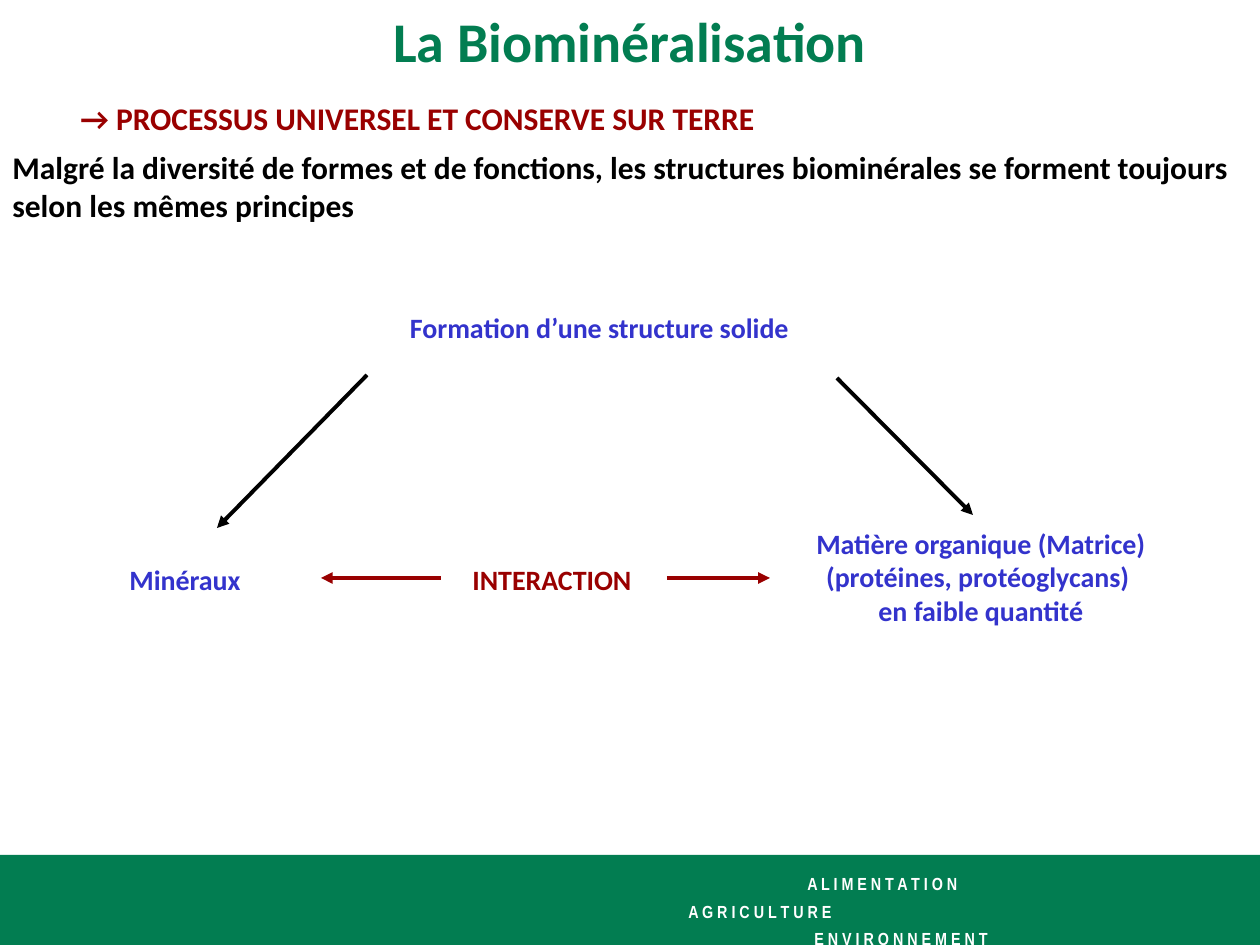
"""Build the slide on biomineralisation and its universal principles."""
import pptx
import pptx.dml.color
import pptx.enum.shapes
import pptx.enum.text
import pptx.oxml.ns
import pptx.util
from lxml import etree

RGBColor = pptx.dml.color.RGBColor
GREEN = RGBColor(0x02, 0x7D, 0x51)
RED = RGBColor(0x99, 0x00, 0x00)
BLUE = RGBColor(0x33, 0x33, 0xCC)
BLACK = RGBColor(0x00, 0x00, 0x00)
WHITE = RGBColor(0xFF, 0xFF, 0xFF)

PX = 914400 // 126
WIDTH, HEIGHT = 1260, 945
BAND = (0, 855, 1291, 96)
MOTTO_BOX = (669, 861, 431, 94)
MOTTO = [
    ("A L I M E N T A T I O N", 126),
    ("A G R I C U L T U R E", 7),
    ("E N V I R O N N E M E N T", 133),
]
TEXTS = [
    ("Malgré la diversité de formes et de fonctions, les structures "
     "biominérales se forment toujours selon les mêmes principes",
     dict(at=(0, 142, WIDTH, 88), size=18, color=BLACK)),
    ("La Biominéralisation",
     dict(at=(0, 0, WIDTH, 79), size=32, color=GREEN, centered=True)),
    ("→ PROCESSUS UNIVERSEL ET CONSERVE SUR TERRE",
     dict(at=(68, 93, 703, 50), size=18, color=RED, wrap=False)),
    ("Formation d’une structure solide",
     dict(at=(285, 304, 629, 47), color=BLUE, centered=True)),
    ("Minéraux", dict(at=(117, 556, 137, 47), color=BLUE, wrap=False)),
    ("Matière organique (Matrice)\n(protéines, protéoglycans) \nen faible quantité",
     dict(at=(702, 520, 558, 113), color=BLUE, centered=True)),
    ("INTERACTION", dict(at=(460, 556, 185, 47), color=RED, wrap=False)),
]
ARROWS = [
    ((367, 375), (217, 528), BLACK),
    ((837, 378), (973, 515), BLACK),
    ((667, 578), (770, 578), RED),
    ((441, 578), (321, 578), RED),
]


def px(*lengths):
    return [length * PX for length in lengths]


def add_text(page, text, at, color, size=16, font="Calibri", centered=False,
             wrap=True, indents=(), spacing=None):
    frame = page.shapes.add_textbox(*px(*at)).text_frame
    frame.word_wrap = wrap
    frame.text = text
    for para in frame.paragraphs:
        if centered:
            para.alignment = pptx.enum.text.PP_ALIGN.CENTER
        if spacing:
            para.line_spacing = spacing
        for span in para.runs:
            span.font.name = font
            span.font.size = pptx.util.Pt(size)
            span.font.bold = True
            span.font.color.rgb = color
    for para, indent in zip(frame.paragraphs, indents):
        para._p.get_or_add_pPr().set("marL", str(indent * PX))


def add_arrow(page, start, end, color):
    arrow = page.shapes.add_connector(
        pptx.enum.shapes.MSO_CONNECTOR.STRAIGHT, *px(*start, *end))
    arrow.line.color.rgb = color
    arrow.line.width = pptx.util.Pt(2.25)
    qn = pptx.oxml.ns.qn
    etree.SubElement(arrow.line._get_or_add_ln(), qn("a:tailEnd"), type="triangle")
    etree.SubElement(arrow._element.spPr, qn("a:effectLst"))


def main():
    deck = pptx.Presentation()
    deck.slide_width, deck.slide_height = px(WIDTH, HEIGHT)
    page = deck.slides.add_slide(deck.slide_layouts[6])

    band = page.shapes.add_shape(
        pptx.enum.shapes.MSO_SHAPE.RECTANGLE, *px(*BAND))
    band.shadow.inherit = False
    band.fill.solid()
    band.fill.fore_color.rgb = GREEN
    band.line.fill.background()

    words, indents = zip(*MOTTO)
    add_text(page, "\n".join(words), at=MOTTO_BOX, color=WHITE, size=10,
             font="Arial Narrow", indents=indents, spacing=1.3)
    for text, style in TEXTS:
        add_text(page, text, **style)
    for start, end, color in ARROWS:
        add_arrow(page, start, end, color)
    deck.save("out.pptx")


if __name__ == "__main__":
    main()
